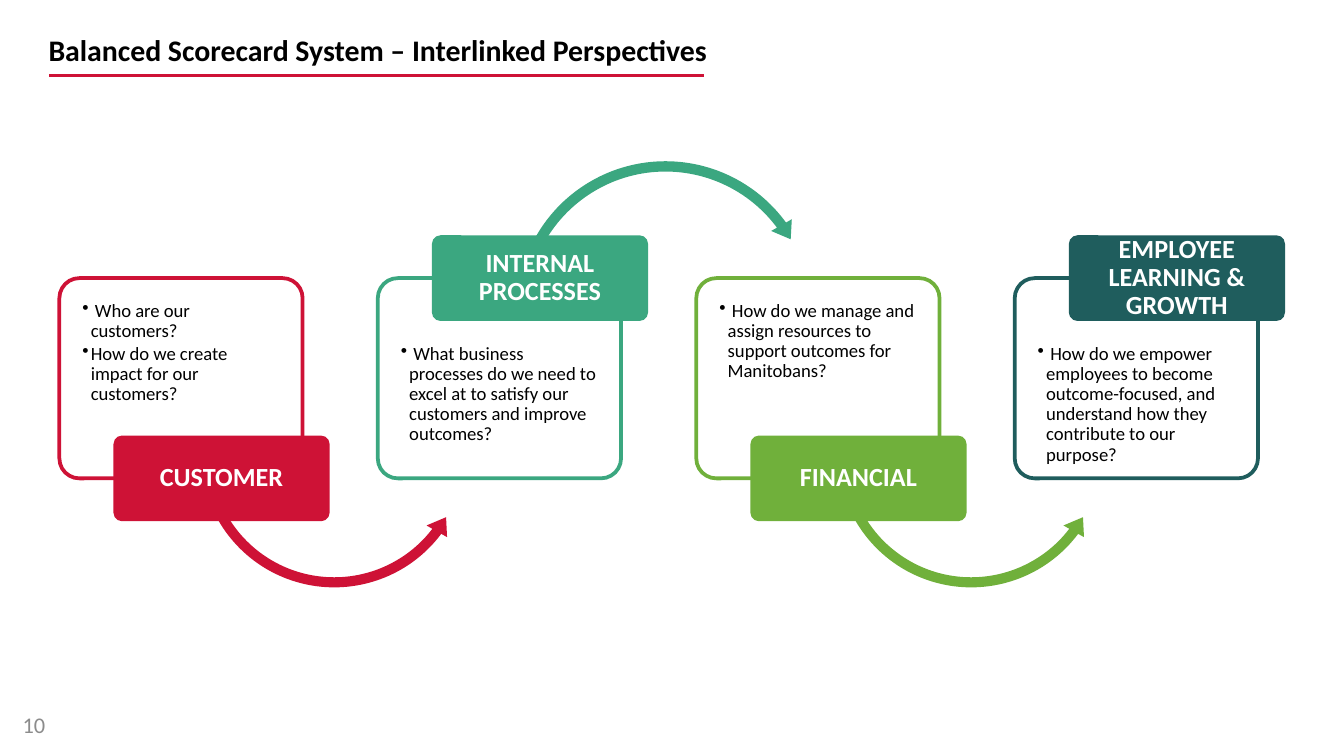
from lxml.etree import SubElement
from pptx import Presentation
from pptx.dml.color import RGBColor
from pptx.enum.shapes import MSO_CONNECTOR, MSO_SHAPE
from pptx.enum.text import MSO_ANCHOR, PP_ALIGN
from pptx.oxml.ns import qn
from pptx.util import Pt

RED = RGBColor(0xCE, 0x12, 0x36)
TEAL = RGBColor(0x3B, 0xA7, 0x80)
GREEN = RGBColor(0x70, 0xB0, 0x3B)
PETROL = RGBColor(0x1F, 0x5D, 0x5D)
BLACK = RGBColor(0, 0, 0)
WHITE = RGBColor(0xFF, 0xFF, 0xFF)
GREY = RGBColor(0x8C, 0x8C, 0x8C)
FONT = "Calibri"

# Content: label, colour, questions; labels alternate between bottom and top
TITLE = "Balanced Scorecard System – Interlinked Perspectives"
PAGE = "10"
PERSPECTIVES = [
    ("CUSTOMER", RED, [" Who are our customers?",
                       "How do we create impact for our customers?"]),
    ("INTERNAL PROCESSES", TEAL, [
        " What business processes do we need to excel at to satisfy our "
        "customers and improve outcomes?"]),
    ("FINANCIAL", GREEN, [
        " How do we manage and assign resources to support outcomes for Manitobans?"]),
    ("EMPLOYEE LEARNING & GROWTH", PETROL, [
        " How do we empower employees to become outcome-focused, and "
        "understand how they contribute to our purpose?"]),
]

# Layout in points
LEFT, STEP = 31.8, 170.6
CARD_TOP, CARD_W, CARD_H = 149, 130.3, 107.3
LABEL_DX, LABEL_W, LABEL_H = 29, 115.8, 45.9
CARD_MARGIN = 9.2
# Arrow: preset, left offset from card, top, size, adjustments
ARROW_BELOW = (MSO_SHAPE.LEFT_CIRCULAR_ARROW, 72, 167.8, 150.5,
               (0.036, 4.515, 22.27, 90.245, 0.042))
ARROW_ABOVE = (MSO_SHAPE.CIRCULAR_ARROW, 70.6, 82.8, 167,
               (0.033, 4.032, 194.213, 125.755, 0.038))


def add_filled(slide, preset, left, top, width, height, fill, adjustments):
    shape = slide.shapes.add_shape(preset, Pt(left), Pt(top), Pt(width), Pt(height))
    shape.shadow.inherit = False
    shape.fill.solid()
    shape.fill.fore_color.rgb = fill
    shape.line.fill.background()
    for i, value in enumerate(adjustments):
        shape.adjustments[i] = value
    return shape


def set_frame(frame, anchor, left, top, right, bottom):
    frame.word_wrap = True
    frame.vertical_anchor = anchor
    frame.margin_left, frame.margin_top = Pt(left), Pt(top)
    frame.margin_right, frame.margin_bottom = Pt(right), Pt(bottom)


def write(paragraph, text, size, color, bold=False, align=PP_ALIGN.LEFT):
    paragraph.alignment = align
    run = paragraph.add_run()
    run.text = text
    run.font.name, run.font.size = FONT, Pt(size)
    run.font.bold, run.font.color.rgb = bold, color


def add_bullet(paragraph):
    properties = paragraph._p.get_or_add_pPr()
    properties.set("marL", str(Pt(4.5)))
    properties.set("indent", str(-Pt(4.5)))
    SubElement(properties, qn("a:buChar")).set("char", "•")


def add_card(slide, left, color, questions, text_drop):
    card = add_filled(slide, MSO_SHAPE.ROUNDED_RECTANGLE, left, CARD_TOP,
                      CARD_W, CARD_H, WHITE, [0.1])
    fill_color = card._element.spPr.find(qn("a:solidFill"))[0]
    SubElement(fill_color, qn("a:alpha")).set("val", "90000")
    card.line.color.rgb = color
    card.line.width = Pt(2)
    frame = card.text_frame
    set_frame(frame, MSO_ANCHOR.TOP, CARD_MARGIN, CARD_MARGIN + text_drop,
              CARD_MARGIN, 0)
    for i, question in enumerate(questions):
        paragraph = frame.add_paragraph() if i else frame.paragraphs[0]
        add_bullet(paragraph)
        paragraph.line_spacing = 0.9
        paragraph.space_after = Pt(1.5)
        write(paragraph, question, 10, BLACK)


def add_label(slide, left, top, color, text):
    label = add_filled(slide, MSO_SHAPE.ROUNDED_RECTANGLE, left, top,
                       LABEL_W, LABEL_H, color, [0.1])
    set_frame(label.text_frame, MSO_ANCHOR.MIDDLE, 2, 1.5, 2, 1.5)
    paragraph = label.text_frame.paragraphs[0]
    paragraph.line_spacing = 0.9
    write(paragraph, text, 14, WHITE, True, PP_ALIGN.CENTER)


def main():
    prs = Presentation()
    prs.slide_width, prs.slide_height = Pt(720), Pt(405)
    slide = prs.slides.add_slide(prs.slide_layouts[5])

    # Title
    title = slide.shapes.title
    title.left, title.top, title.width, title.height = Pt(26), Pt(12.5), Pt(497.5), Pt(28)
    set_frame(title.text_frame, MSO_ANCHOR.MIDDLE, 0, 0, 0, 0)
    write(title.text_frame.paragraphs[0], TITLE, 16, BLACK, True)

    # Page number
    number = slide.shapes.add_textbox(Pt(5), Pt(377.5), Pt(168), Pt(21.5))
    set_frame(number.text_frame, MSO_ANCHOR.MIDDLE, 7.2, 3.6, 7.2, 3.6)
    write(number.text_frame.paragraphs[0], PAGE, 12, GREY)

    # Perspectives, each with an arrow to the next
    for i, (name, color, questions) in enumerate(PERSPECTIVES):
        left = LEFT + i * STEP
        label_above = i % 2 == 1
        add_card(slide, left, color, questions, LABEL_H / 2 if label_above else 0)
        if i < len(PERSPECTIVES) - 1:
            preset, dx, top, size, adjustments = ARROW_ABOVE if label_above else ARROW_BELOW
            add_filled(slide, preset, left + dx, top, size, size, color, adjustments)
        edge = CARD_TOP if label_above else CARD_TOP + CARD_H
        add_label(slide, left + LABEL_DX, edge - LABEL_H / 2, color, name)

    # Title rule
    rule = slide.shapes.add_connector(MSO_CONNECTOR.STRAIGHT, Pt(377), Pt(40.4),
                                      Pt(26), Pt(40.4))
    rule.line.color.rgb = RED
    rule.line.width = Pt(2)
    SubElement(rule._element.spPr, qn("a:effectLst"))

    prs.save("out.pptx")


if __name__ == "__main__":
    main()
